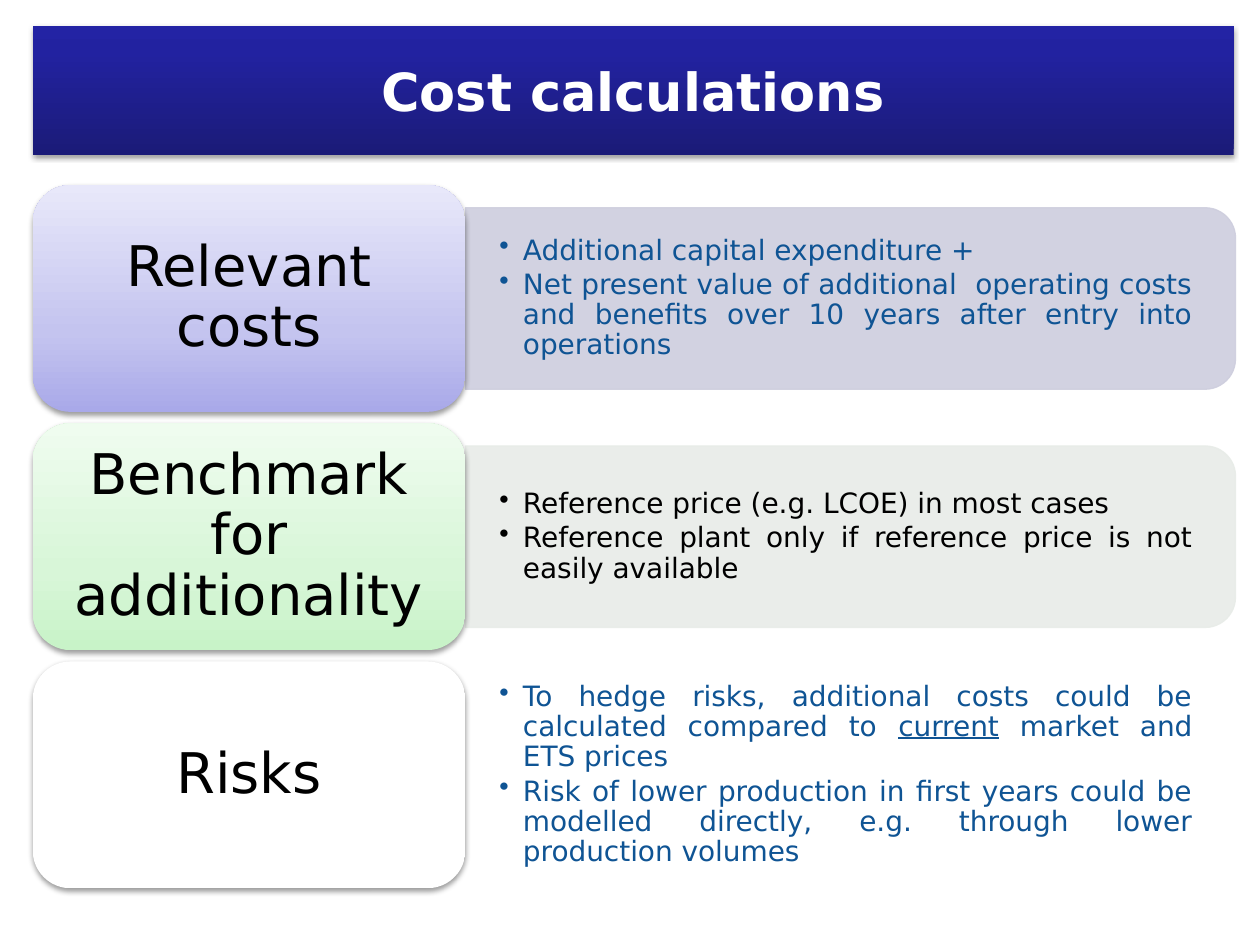
from lxml.etree import SubElement
from pptx import Presentation
from pptx.dml.color import RGBColor
from pptx.enum.shapes import MSO_SHAPE
from pptx.enum.text import MSO_ANCHOR, PP_ALIGN
from pptx.oxml.ns import qn
from pptx.util import Pt

TITLE = "Cost calculations"
FONT = "DejaVu Sans"
COLORS = {"white": "FFFFFF", "black": "000000", "blue": "0F5494",
          "lilac": "CECEDE", "sage": "E8ECE8"}
# Gradient stops run from the bottom edge (0) to the top edge (100).
BANNER_STOPS = [(0, "1B1B78"), (80, "2222A0"), (100, "2323A4")]

# Each bullet is a list of (text, underlined) runs.
ROWS = [
    {"label": "Relevant costs",
     "stops": [(0, "A9A9E9"), (35, "C4C4EF"), (100, "E8E8FA")],
     "panel": "lilac", "panel_height": 103.7, "text": "blue",
     "bullets": [
         [("Additional capital expenditure +", False)],
         [("Net present value of additional  operating costs and benefits "
           "over 10 years after entry into operations", False)]]},
    {"label": "Benchmark for additionality",
     "stops": [(0, "C8F3C8"), (35, "D8F6D8"), (100, "EFFCEF")],
     "panel": "sage", "panel_height": 103.7, "text": "black",
     "bullets": [
         [("Reference price (e.g. LCOE) in most cases", False)],
         [("Reference plant only if reference price is not easily available",
           False)]]},
    {"label": "Risks",
     "stops": [(0, "FFFFFF"), (100, "FFFFFF")],
     "panel": "white", "panel_height": 97.9, "text": "blue",
     "bullets": [
         [("To hedge risks, additional costs could be calculated compared to ",
           False), ("current", True), (" market and ETS prices", False)],
         [("Risk of lower production in first years could be modelled "
           "directly, e.g. through lower production volumes", False)]]},
]

LEFT = 18.7
ROW_TOP, ROW_PITCH = 105.8, 136.1
LABEL_WIDTH, LABEL_HEIGHT = 247.3, 129.6
PANEL_LEFT, PANEL_WIDTH = LEFT + LABEL_WIDTH, 440
BODY_WIDTH, BODY_MARGIN = 434.9, 10.1
BULLET_INDENT = 13.5


def rgb(name):
    return RGBColor.from_string(COLORS[name])


def set_gradient(shape, stops):
    shape.fill.gradient()
    gradient = shape._element.spPr.find(qn("a:gradFill"))
    for child in list(gradient):
        gradient.remove(child)
    stop_list = SubElement(gradient, qn("a:gsLst"))
    for position, color in stops:
        stop = SubElement(stop_list, qn("a:gs"), pos=str(position * 1000))
        SubElement(stop, qn("a:srgbClr"), val=color)
    SubElement(gradient, qn("a:lin"), ang="16200000", scaled="0")


def add_shadow(shape):
    shape.shadow.inherit = False
    effects = shape._element.spPr.find(qn("a:effectLst"))
    shadow = SubElement(effects, qn("a:outerShdw"), blurRad=str(Pt(3.1)),
                        dist=str(Pt(1.6)), dir="5400000", rotWithShape="0")
    color = SubElement(shadow, qn("a:srgbClr"), val=COLORS["black"])
    SubElement(color, qn("a:alpha"), val="38000")


def set_frame(frame, side, edge):
    frame.word_wrap = True
    frame.vertical_anchor = MSO_ANCHOR.MIDDLE
    frame.margin_left = frame.margin_right = Pt(side)
    frame.margin_top = frame.margin_bottom = Pt(edge)


def style_paragraph(paragraph, size, color, align):
    paragraph.alignment = align
    paragraph.font.name = FONT
    paragraph.font.size = Pt(size)
    paragraph.font.color.rgb = rgb(color)


def add_title(slide):
    title = slide.shapes.title
    title.left, title.top = Pt(LEFT), Pt(15)
    title.width, title.height = Pt(686.2), Pt(73.4)
    set_gradient(title, BANNER_STOPS)
    add_shadow(title)
    title.text_frame.text = TITLE
    title.text_frame.vertical_anchor = MSO_ANCHOR.MIDDLE
    heading = title.text_frame.paragraphs[0]
    style_paragraph(heading, 30, "white", PP_ALIGN.CENTER)
    heading.font.bold = True


def add_panel(slide, row, middle):
    """Draw a bar turned a quarter, so its rounded end faces right."""
    height = row["panel_height"]
    panel = slide.shapes.add_shape(
        MSO_SHAPE.ROUND_2_SAME_RECTANGLE,
        Pt(PANEL_LEFT + (PANEL_WIDTH - height) / 2),
        Pt(middle - PANEL_WIDTH / 2), Pt(height), Pt(PANEL_WIDTH))
    panel.rotation = 90
    panel.shadow.inherit = False
    panel.fill.solid()
    panel.fill.fore_color.rgb = rgb(row["panel"])
    panel.line.color.rgb = rgb(row["panel"])
    panel.line.width = Pt(0.75)
    for color in panel._element.spPr.iter(qn("a:srgbClr")):
        SubElement(color, qn("a:alpha"), val="90000")


def add_bullets(slide, row, middle):
    height = row["panel_height"] - BODY_MARGIN
    body = slide.shapes.add_textbox(Pt(PANEL_LEFT), Pt(middle - height / 2),
                                    Pt(BODY_WIDTH), Pt(height))
    frame = body.text_frame
    set_frame(frame, 19.4, BODY_MARGIN)
    for index, runs in enumerate(row["bullets"]):
        paragraph = frame.add_paragraph() if index else frame.paragraphs[0]
        style_paragraph(paragraph, 16, row["text"], PP_ALIGN.JUSTIFY)
        paragraph.line_spacing = 0.9
        paragraph.space_after = Pt(2.4)
        properties = paragraph._p.get_or_add_pPr()
        properties.set("marL", str(Pt(BULLET_INDENT)))
        properties.set("indent", str(-Pt(BULLET_INDENT)))
        bullet = properties.makeelement(qn("a:buChar"), {"char": "•"})
        properties.find(qn("a:defRPr")).addprevious(bullet)
        for text, underlined in runs:
            run = paragraph.add_run()
            run.text = text
            if underlined:
                run.font.underline = True


def add_label(slide, row, top):
    label = slide.shapes.add_shape(MSO_SHAPE.ROUNDED_RECTANGLE, Pt(LEFT),
                                   Pt(top), Pt(LABEL_WIDTH), Pt(LABEL_HEIGHT))
    set_gradient(label, row["stops"])
    label.line.fill.background()
    add_shadow(label)
    set_frame(label.text_frame, 9.6, 4.8)
    label.text_frame.text = row["label"]
    paragraph = label.text_frame.paragraphs[0]
    style_paragraph(paragraph, 32, "black", PP_ALIGN.CENTER)
    paragraph.line_spacing = 0.9


def main():
    deck = Presentation()
    deck.slide_width, deck.slide_height = Pt(720), Pt(540)
    slide = deck.slides.add_slide(deck.slide_layouts[5])
    add_title(slide)
    for index, row in enumerate(ROWS):
        top = ROW_TOP + index * ROW_PITCH
        middle = top + LABEL_HEIGHT / 2
        add_panel(slide, row, middle)
        add_bullets(slide, row, middle)
        add_label(slide, row, top)
    deck.save("out.pptx")


if __name__ == "__main__":
    main()
